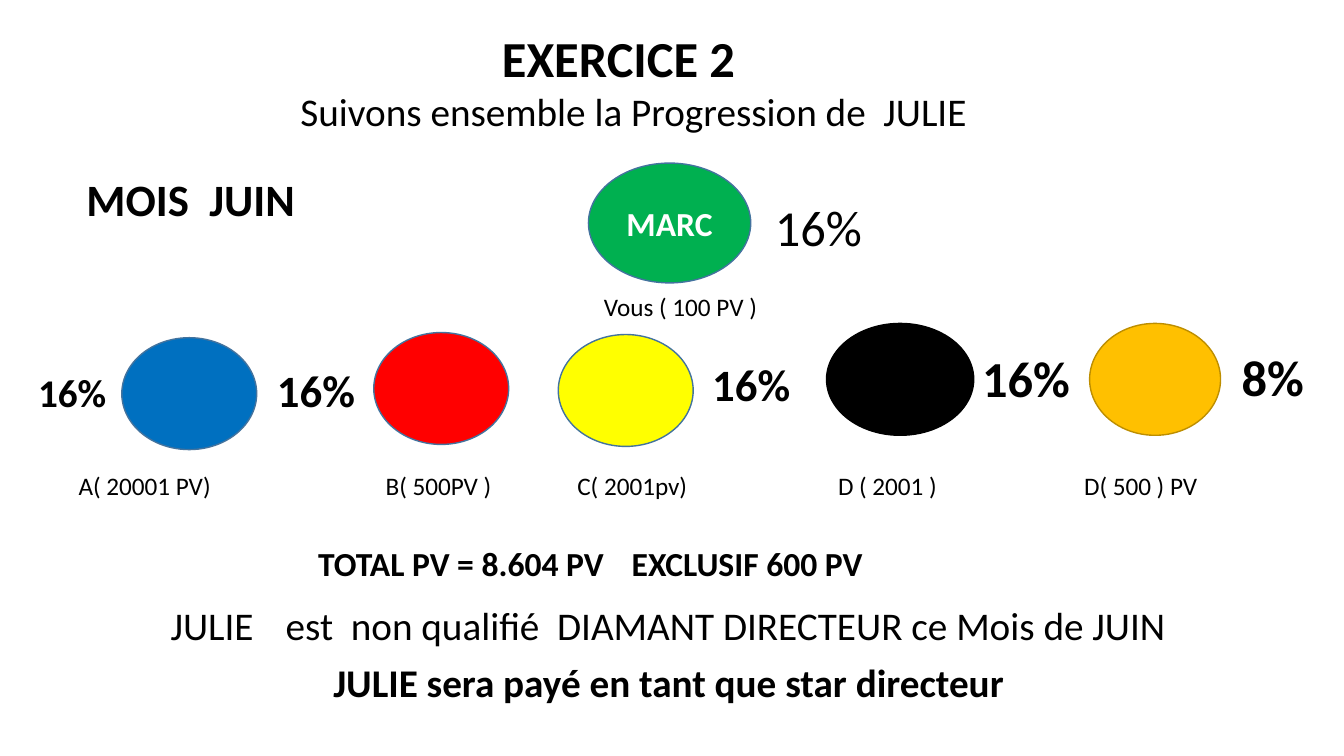
from dataclasses import dataclass

from pptx import Presentation
from pptx import util as u
from pptx.dml.color import RGBColor
from pptx.enum import shapes, text


@dataclass(frozen=True)
class Theme:
    """Colours, font and type sizes of the slide."""
    font: str = "Calibri"
    ink: str = "000000"
    white: str = "FFFFFF"
    outline: str = "43739E"
    gold_outline: str = "BD8E00"
    green: str = "00B050"
    blue: str = "0070C0"
    red: str = "FF0000"
    yellow: str = "FFFF00"
    gold: str = "FFC000"
    title: int = 36
    heading: int = 32
    body: int = 28
    total: int = 24
    label: int = 18


class SlideBuilder:
    """Holds the theme and the current slide, and draws its elements in centimetres."""

    def __init__(self, slide, theme):
        """Keep the slide and its theme."""
        self.slide = slide
        self.theme = theme

    def set_words(self, shape, words, size, bold, color, align, anchor):
        """Put one formatted paragraph in a shape."""
        frame = shape.text_frame
        for name, value in {"word_wrap": True, "vertical_anchor": anchor,
                            "auto_size": text.MSO_AUTO_SIZE.NONE}.items():
            setattr(frame, name, value)
        for side in ("left", "right"):
            setattr(frame, f"margin_{side}", u.Cm(0.25))
        for side in ("top", "bottom"):
            setattr(frame, f"margin_{side}", u.Cm(0.13))
        paragraph = frame.paragraphs[0]
        paragraph.alignment = align
        paragraph.line_spacing = 1.0
        run = paragraph.add_run()
        run.text = words
        for name, value in {"name": self.theme.font, "size": u.Pt(size), "bold": bold}.items():
            setattr(run.font, name, value)
        run.font.color.rgb = RGBColor.from_string(color)

    def fit(self, shape, words, left, top, width, size, bold):
        """Place a one-line text shape whose height follows its type size."""
        height = size * 0.0425 + 0.26
        for name, value in {"left": left, "top": top, "width": width, "height": height}.items():
            setattr(shape, name, u.Cm(value))
        self.set_words(shape, words, size, bold, self.theme.ink,
                       text.PP_ALIGN.LEFT, text.MSO_ANCHOR.TOP)

    def title(self, words, left, top, width):
        """Move and format the title placeholder."""
        self.fit(self.slide.shapes.title, words, left, top, width, self.theme.title, True)

    def label(self, words, left, top, width, size, bold=False):
        """Add a line of text."""
        shape = self.slide.shapes.add_textbox(0, 0, 0, 0)
        self.fit(shape, words, left, top, width, size, bold)

    def ellipse(self, left, top, width, height, fill, line, words=""):
        """Add an outlined ellipse with an optional name inside."""
        box = [u.Cm(value) for value in (left, top, width, height)]
        shape = self.slide.shapes.add_shape(shapes.MSO_SHAPE.OVAL, *box)
        shape.shadow.inherit = False
        shape.fill.solid()
        shape.fill.fore_color.rgb = RGBColor.from_string(fill)
        shape.line.color.rgb = RGBColor.from_string(line)
        shape.line.width = u.Pt(1)
        if words:
            self.set_words(shape, words, self.theme.total, True, self.theme.white,
                           text.PP_ALIGN.CENTER, text.MSO_ANCHOR.MIDDLE)


def main():
    """Build the slide and save it."""
    presentation = Presentation()
    presentation.slide_width = u.Cm(33.87)
    presentation.slide_height = u.Cm(19.05)
    theme = Theme()
    builder = SlideBuilder(presentation.slides.add_slide(presentation.slide_layouts[5]), theme)

    builder.title("EXERCICE 2", 12.4, 0.56, 10)
    builder.label("Suivons ensemble la Progression de  JULIE", 7.32, 2.08, 22, theme.body)
    builder.label("MOIS  JUIN", 1.93, 4.19, 7.47, theme.heading, True)

    builder.ellipse(14.83, 4.11, 4.09, 3.02, theme.green, theme.outline, "MARC")
    builder.label("16%", 19.28, 4.8, 4.47, theme.title)
    builder.label("Vous ( 100 PV )", 14.97, 7.21, 6, theme.label)

    members = [
        ("A( 20001 PV)", 1.73, (3.07, 8.51, 3.4), theme.blue, theme.outline,
         "16%", (0.71, 9.14), theme.body),
        ("B( 500PV )", 9.47, (9.42, 8.38, 3.4), theme.red, theme.outline,
         "16%", (6.73, 9.02), theme.heading),
        ("C( 2001pv)", 14.3, (14.07, 8.43, 3.4), theme.yellow, theme.outline,
         "16%", (17.7, 8.86), theme.heading),
        ("D ( 2001 )", 20.87, (20.83, 8.15, 3.71), theme.ink, theme.ink,
         "16%", (24.5, 8.61), theme.title),
        ("D( 500 ) PV", 27.07, (27.46, 8.15, 3.3), theme.gold, theme.gold_outline,
         "8%", (31.04, 8.59), theme.title),
    ]
    for name, name_left, place, fill, line, percent, percent_place, size in members:
        builder.ellipse(*place, 2.82, fill, line)
        builder.label(percent, *percent_place, 2.8, size, True)
        builder.label(name, name_left, 11.73, 5, theme.label)

    builder.label("TOTAL PV = 8.604 PV", 7.77, 13.56, 8, theme.total, True)
    builder.label("EXCLUSIF 600 PV", 15.67, 13.56, 8, theme.total, True)
    builder.label("JULIE", 4.05, 15.01, 2.9, theme.body)
    builder.label("est  non qualifié  DIAMANT DIRECTEUR ce Mois de JUIN",
                  6.95, 15.01, 26, theme.body)
    builder.label("JULIE sera payé en tant que star directeur", 8.15, 16.46, 23, theme.body, True)
    presentation.save("out.pptx")


if __name__ == "__main__":
    main()
